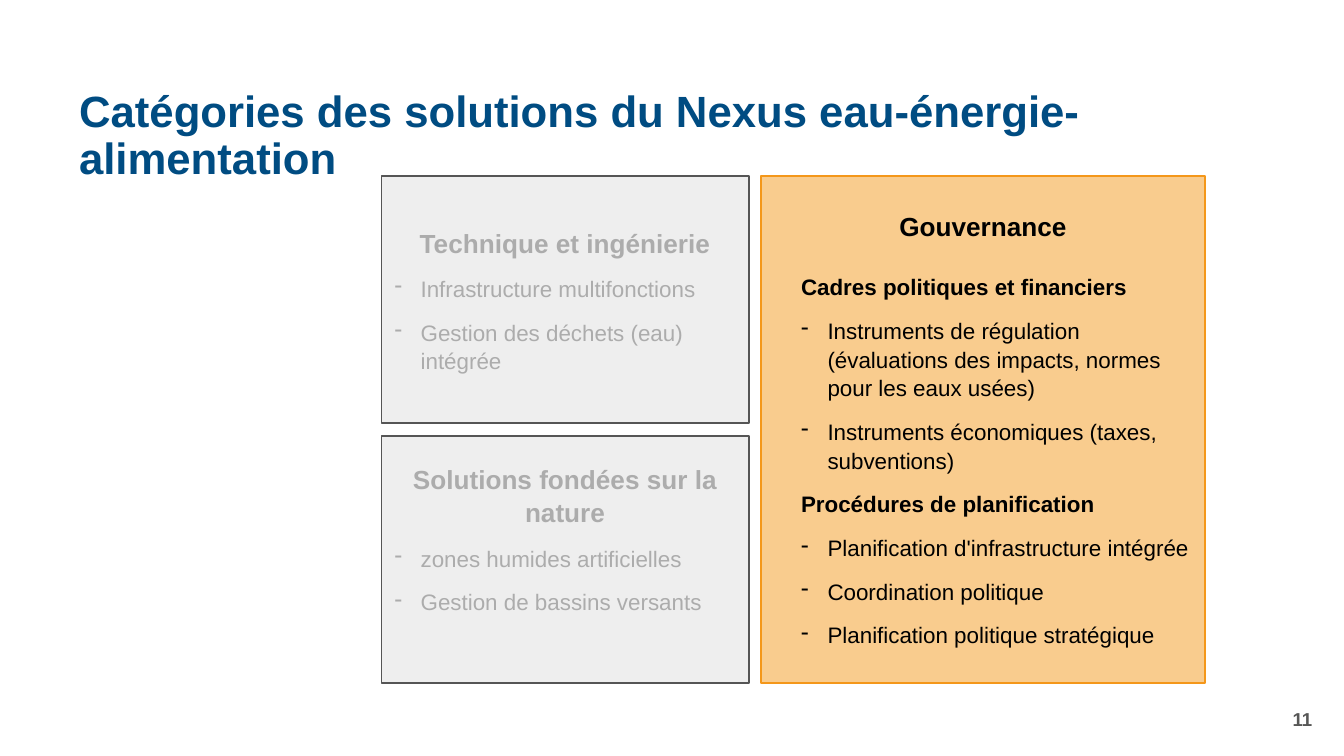
"""Build the slide on the solution categories of the water-energy-food nexus."""
from lxml.etree import SubElement
from pptx import Presentation
from pptx.dml.color import RGBColor
from pptx.enum.shapes import MSO_SHAPE
from pptx.enum.text import MSO_ANCHOR, MSO_AUTO_SIZE, PP_ALIGN
from pptx.oxml.ns import qn
from pptx.util import Cm, Pt

TITLE = "Catégories des solutions du Nexus eau-énergie-alimentation"
PAGE = "11"
TECHNIQUE = ("Technique et ingénierie", [
    ("item", "Infrastructure multifonctions"),
    ("item", "Gestion des déchets (eau) intégrée"),
])
NATURE = ("Solutions fondées sur la nature", [
    ("item", "zones humides artificielles"),
    ("item", "Gestion de bassins versants"),
])
GOUVERNANCE = ("Gouvernance", [
    ("group", "Cadres politiques et financiers"),
    ("item", "Instruments de régulation (évaluations des impacts, normes pour les eaux usées)"),
    ("item", "Instruments économiques (taxes, subventions)"),
    ("group", "Procédures de planification"),
    ("item", "Planification d'infrastructure intégrée"),
    ("item", "Coordination politique"),
    ("item", "Planification politique stratégique"),
])

MUTED = {"fill": "EEEEEE", "line": "555555", "text": "ACACAC", "margin": 0.49,
         "heading": {"line_spacing": 1.07, "space_after": Pt(8)}}
ACTIVE = {"fill": "F4971A", "line": "F4971A", "text": "000000", "margin": 1.0, "opacity": 49,
          "heading": {"space_after": Pt(16)}}

LEFT, TOP, GAP = 7.21, 3.33, 0.24
NARROW, WIDE, FULL = 6.94, 8.38, 9.58
HALF = (FULL - GAP) / 2
HANGING = 0.5
INSET = 0.13
CATEGORIES = [
    (GOUVERNANCE, ACTIVE, (LEFT + NARROW + GAP, TOP, WIDE, FULL), INSET),
    (TECHNIQUE, MUTED, (LEFT, TOP, NARROW, HALF), INSET),
    (NATURE, MUTED, (LEFT, TOP + HALF + GAP, NARROW, HALF), INSET + 0.8),
]


def color(value):
    return RGBColor.from_string(value)


def apply(target, formats):
    for name, value in formats.items():
        setattr(target, name, value)


def write(paragraph, text, size, ink, bold, **formats):
    apply(paragraph, formats)
    run = paragraph.add_run()
    run.text = text
    apply(run.font, {"name": "Arial", "size": Pt(size), "bold": bold})
    run.font.color.rgb = color(ink)


def indent(paragraph, margin, bullet):
    properties = paragraph._p.get_or_add_pPr()
    properties.set("marL", str(Cm(margin)))
    properties.set("indent", str(-Cm(HANGING)))
    if bullet:
        SubElement(properties, qn("a:buChar"), char="-")


def add_category(slide, category, style, place, bottom):
    heading, entries = category
    panel = slide.shapes.add_shape(MSO_SHAPE.RECTANGLE, *map(Cm, place))
    panel.shadow.inherit = False
    panel.fill.solid()
    panel.fill.fore_color.rgb = color(style["fill"])
    if "opacity" in style:
        tint = panel.fill._xPr.find(qn("a:solidFill"))[0]
        SubElement(tint, qn("a:alpha"), val=str(style["opacity"] * 1000))
    panel.line.color.rgb = color(style["line"])
    panel.line.width = Pt(1)
    frame = panel.text_frame
    apply(frame, {"word_wrap": True, "vertical_anchor": MSO_ANCHOR.MIDDLE,
                  "margin_bottom": Cm(bottom)})
    write(frame.paragraphs[0], heading, 14, style["text"], True,
          alignment=PP_ALIGN.CENTER, **style["heading"])
    for level, text in entries:
        paragraph = frame.add_paragraph()
        indent(paragraph, style["margin"], level == "item")
        write(paragraph, text, 12, style["text"], level == "group",
              alignment=PP_ALIGN.LEFT, line_spacing=1.07, space_after=Pt(8))


def main():
    deck = Presentation()
    apply(deck, {"slide_width": Cm(25.4), "slide_height": Cm(14.29)})
    slide = deck.slides.add_slide(deck.slide_layouts[5])

    title = slide.shapes.title
    apply(title, {"left": Cm(1.24), "top": Cm(1.83), "width": Cm(23.8), "height": Cm(1.5)})
    page = slide.shapes.add_textbox(Cm(19.33), Cm(13.21), Cm(5.72), Cm(0.76))
    for box in (title, page):
        apply(box.text_frame, {"word_wrap": True, "auto_size": MSO_AUTO_SIZE.NONE,
                               "vertical_anchor": MSO_ANCHOR.MIDDLE})
    write(title.text_frame.paragraphs[0], TITLE, 23.4, "004C82", True,
          alignment=PP_ALIGN.LEFT, line_spacing=0.9, space_before=Pt(0))
    write(page.text_frame.paragraphs[0], PAGE, 10, "575756", True, alignment=PP_ALIGN.RIGHT)

    for category in CATEGORIES:
        add_category(slide, *category)
    deck.save("out.pptx")


if __name__ == "__main__":
    main()
